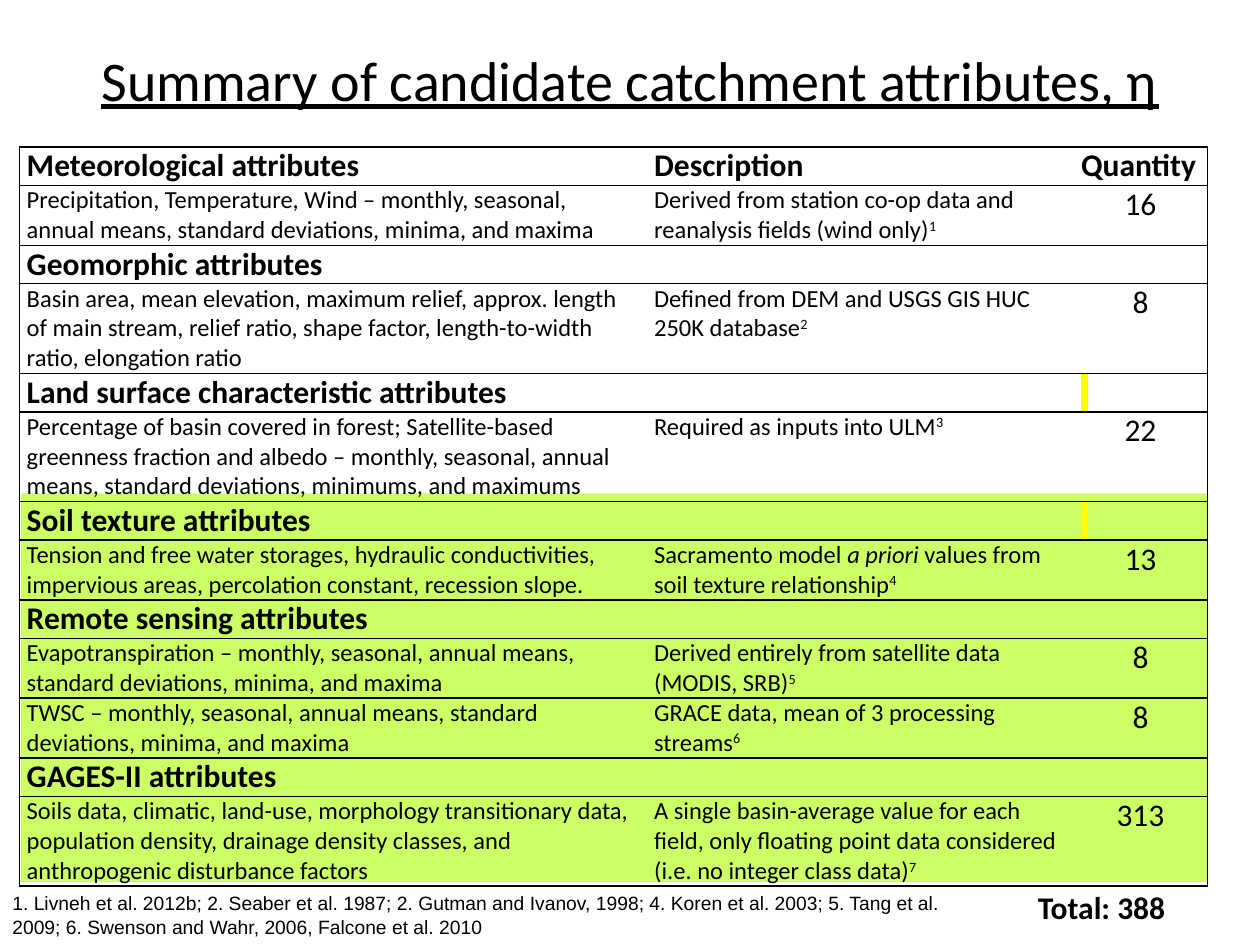
from dataclasses import dataclass

import pptx
import pptx.dml.color
import pptx.enum.shapes
import pptx.enum.text
import pptx.oxml
import pptx.oxml.ns
import pptx.util

Pt = pptx.util.Pt
ALIGN = pptx.enum.text.PP_ALIGN
ANCHOR = pptx.enum.text.MSO_ANCHOR
NAMESPACE = pptx.oxml.ns.nsdecls("a")
BLACK, LIME, YELLOW = "000000", "CCFF66", "FFFF00"
NO_GRID_STYLE = "{2D5ABB26-0587-4C30-8999-92F81FD0307C}"
COLUMN_WIDTHS = (358.5, 244, 76.5)
HEADING_HEIGHT, LINE_HEIGHT = 21.97, 17.09
HEADING = {"size": Pt(18), "bold": True}
BODY = {"size": Pt(14)}
QUANTITY = {"size": Pt(18)}


@dataclass
class Span:
    text: str
    italic: bool = False
    raised: bool = False


@dataclass
class Heading:
    labels: tuple[str, ...]
    merged: bool = False
    marked: bool = False


@dataclass
class Entry:
    attributes: str
    description: list[Span]
    quantity: int
    lines: int


@dataclass
class Label:
    text: str
    bounds: tuple[float, float, float, float]
    font: dict
    align: ALIGN = ALIGN.LEFT
    anchor: ANCHOR = ANCHOR.TOP


def cited(text: str, note: int) -> list[Span]:
    return [Span(text), Span(str(note), raised=True)]


ROWS = [
    Heading(("Meteorological attributes", "Description", "Quantity")),
    Entry("Precipitation, Temperature, Wind – monthly, seasonal, annual means, "
          "standard deviations, minima, and maxima",
          cited("Derived from station co-op data and reanalysis fields (wind only)", 1), 16, 2),
    Heading(("Geomorphic attributes",), merged=True),
    Entry("Basin area, mean elevation, maximum relief, approx. length of main stream, "
          "relief ratio, shape factor, length-to-width ratio, elongation ratio",
          cited("Defined from DEM and USGS GIS HUC 250K database", 2), 8, 3),
    Heading(("Land surface characteristic attributes",), marked=True),
    Entry("Percentage of basin covered in forest; Satellite-based greenness fraction and "
          "albedo – monthly, seasonal, annual means, standard deviations, minimums, and maximums",
          cited("Required as inputs into ULM", 3), 22, 3),
    Heading(("Soil texture attributes",), marked=True),
    Entry("Tension and free water storages, hydraulic conductivities, impervious areas, "
          "percolation constant, recession slope.",
          [Span("Sacramento model "), Span("a priori", italic=True),
           *cited(" values from soil texture relationship", 4)], 13, 2),
    Heading(("Remote sensing attributes",), merged=True),
    Entry("Evapotranspiration – monthly, seasonal, annual means, standard deviations, "
          "minima, and maxima",
          cited("Derived entirely from satellite data (MODIS, SRB)", 5), 8, 2),
    Entry("TWSC – monthly, seasonal, annual means, standard deviations, minima, and maxima",
          cited("GRACE data, mean of 3 processing streams", 6), 8, 2),
    Heading(("GAGES-II attributes",), merged=True),
    Entry("Soils data, climatic, land-use, morphology transitionary data, population density, "
          "drainage density classes, and anthropogenic disturbance factors",
          cited("A single basin-average value for each field, only floating point data "
                "considered (i.e. no integer class data)", 7), 313, 3),
]

LABELS = [
    Label("Summary of candidate catchment attributes, η", (0, 0, 720, 90),
          {"size": Pt(32), "underline": True}, ALIGN.CENTER, ANCHOR.MIDDLE),
    Label("Total: 388", (586, 504, 114, 30), HEADING),
    Label("1. Livneh et al. 2012b; 2. Seaber et al. 1987; 2. Gutman and Ivanov, 1998; "
          "4. Koren et al. 2003; 5. Tang et al. 2009; 6. Swenson and Wahr, 2006, "
          "Falcone et al. 2010", (0, 506, 570, 34), {"size": Pt(11), "name": "Arial"}),
]


def color(value: str) -> pptx.dml.color.RGBColor:
    return pptx.dml.color.RGBColor.from_string(value)


def apply(target, values: dict) -> None:
    for name, value in values.items():
        setattr(target, name, value)


def add_span(para, span: Span, font: dict):
    run = para.add_run()
    run.text = span.text
    apply(run.font, {"name": "Calibri", "italic": span.italic, **font})
    run.font.color.rgb = color(BLACK)
    if span.raised:
        run._r.get_or_add_rPr().set("baseline", "30000")
    return run


def write(cell, spans: list[Span], font: dict, align: ALIGN = ALIGN.LEFT) -> None:
    para = cell.text_frame.paragraphs[0]
    para.alignment = align
    for span in spans:
        add_span(para, span, font)


def mark(cell) -> None:
    run = add_span(cell.text_frame.paragraphs[0], Span(" "), QUANTITY)
    highlight = pptx.oxml.parse_xml(
        f'<a:highlight {NAMESPACE}><a:srgbClr val="{YELLOW}"/></a:highlight>')
    run._r.rPr.find(pptx.oxml.ns.qn("a:latin")).addprevious(highlight)


def format_cell(cell, sides: str) -> None:
    apply(cell, {"margin_left": Pt(4.3), "margin_right": Pt(4.3),
                 "margin_top": 0, "margin_bottom": 0})
    properties = cell._tc.get_or_add_tcPr()
    for side in "LRTB":
        paint = (f'<a:solidFill><a:srgbClr val="{BLACK}"/></a:solidFill>'
                 if side in sides else "<a:noFill/>")
        properties.append(pptx.oxml.parse_xml(
            f'<a:ln{side} {NAMESPACE} w="{Pt(1)}">{paint}</a:ln{side}>'))
    cell.fill.background()


def fill_row(cells: list, row: Heading | Entry) -> None:
    for cell, sides in zip(cells, ("LTB", "TB", "RTB")):
        merged = isinstance(row, Heading) and row.merged
        format_cell(cell, "LRTB" if merged else sides)
    if isinstance(row, Entry):
        write(cells[0], [Span(row.attributes)], BODY)
        write(cells[1], row.description, BODY)
        write(cells[2], [Span(str(row.quantity))], QUANTITY, ALIGN.CENTER)
        return
    for cell, label in zip(cells, row.labels):
        write(cell, [Span(label)], HEADING)
    if row.marked:
        mark(cells[2])
    if row.merged:
        cells[0].merge(cells[2])


def add_attribute_table(page) -> None:
    heights = [HEADING_HEIGHT if isinstance(row, Heading) else row.lines * LINE_HEIGHT
               for row in ROWS]
    frame = page.shapes.add_table(len(ROWS), len(COLUMN_WIDTHS), Pt(11), Pt(84),
                                  Pt(sum(COLUMN_WIDTHS)), Pt(sum(heights)))
    table = frame.table
    apply(table, {"first_row": False, "horz_banding": False})
    table._tbl.tblPr.find(pptx.oxml.ns.qn("a:tableStyleId")).text = NO_GRID_STYLE
    for column, width in zip(table.columns, COLUMN_WIDTHS):
        column.width = Pt(width)
    for table_row, height, row in zip(table.rows, heights, ROWS):
        table_row.height = Pt(height)
        fill_row(list(table_row.cells), row)


def add_label(page, label: Label) -> None:
    box = page.shapes.add_textbox(*map(Pt, label.bounds))
    apply(box.text_frame, {"word_wrap": True, "vertical_anchor": label.anchor})
    write(box, [Span(label.text)], label.font, label.align)


def main() -> None:
    deck = pptx.Presentation()
    apply(deck, {"slide_width": Pt(720), "slide_height": Pt(540)})
    page = deck.slides.add_slide(deck.slide_layouts[6])
    band = page.shapes.add_shape(pptx.enum.shapes.MSO_SHAPE.RECTANGLE,
                                 Pt(12), Pt(282), Pt(678), Pt(222))
    band.shadow.inherit = False
    band.fill.solid()
    band.fill.fore_color.rgb = color(LIME)
    band.line.fill.background()
    add_attribute_table(page)
    for label in LABELS:
        add_label(page, label)
    deck.save("out.pptx")


if __name__ == "__main__":
    main()
